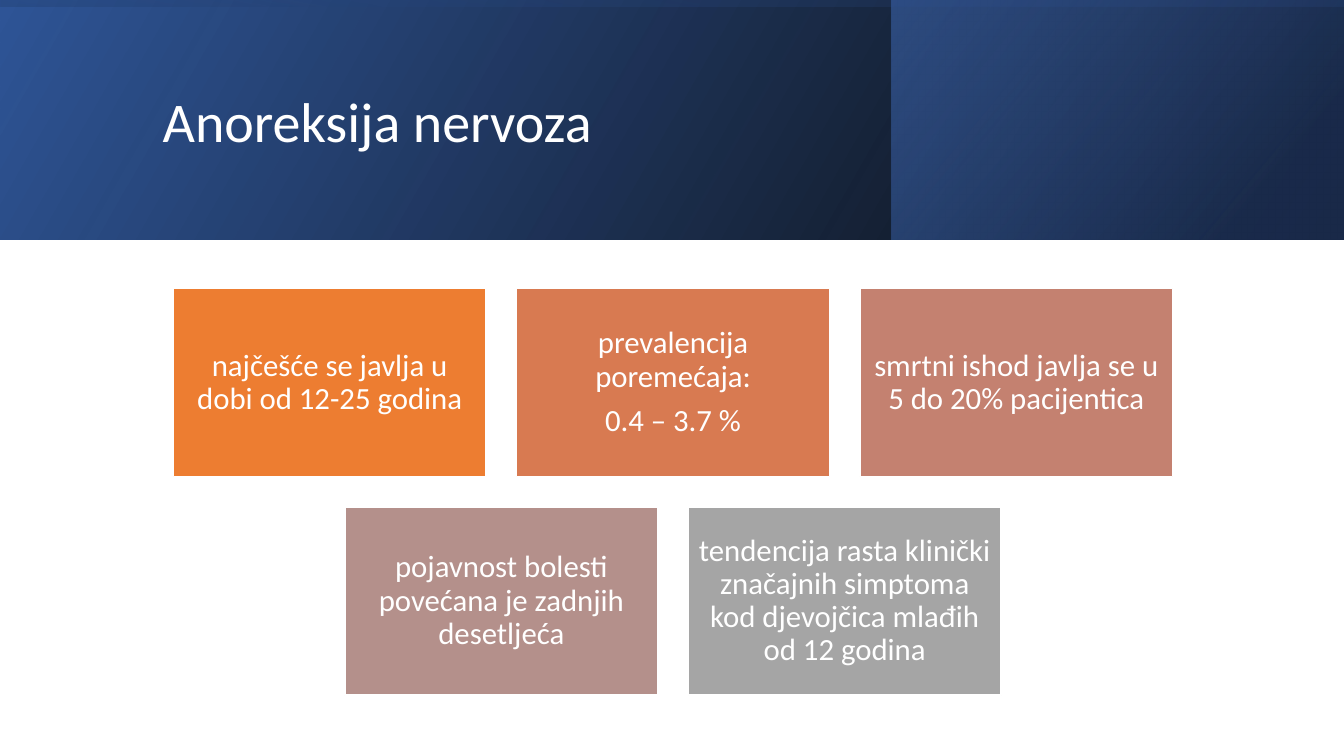
from lxml import etree
from pptx import Presentation
from pptx import util as u
from pptx.dml.color import RGBColor
from pptx.enum import shapes, text
from pptx.oxml import ns

PX = 9525
FONT = "Calibri"
WHITE = "FFFFFF"
CARDS = [
    [("ED7D31", ["najčešće se javlja u dobi od 12-25 godina"]),
     ("D87A51", ["prevalencija poremećaja:", "0.4 – 3.7 %"]),
     ("C48170", ["smrtni ishod javlja se u 5 do 20% pacijentica"])],
    [("B4908B", ["pojavnost bolesti povećana je zadnjih desetljeća"]),
     ("A5A5A5", ["tendencija rasta klinički značajnih simptoma "
                 "kod djevojčica mlađih od 12 godina"])],
]


def px(length):
    """Turn pixels into EMU."""
    return u.Emu(round(length * PX))


def color(value):
    """Turn a hex string into a colour."""
    return RGBColor.from_string(value)


def add_box(slide, box):
    """Add a rectangle without shadow or outline."""
    shape = slide.shapes.add_shape(shapes.MSO_SHAPE.RECTANGLE, *map(px, box))
    shape.shadow.inherit = False
    shape.line.fill.background()
    return shape


def write(frame, lines, size, align, margin, space_after=0):
    """Fill a text frame with white, vertically centred paragraphs."""
    frame.word_wrap = True
    frame.vertical_anchor = text.MSO_ANCHOR.MIDDLE
    frame.margin_left = frame.margin_right = px(margin)
    frame.margin_top = frame.margin_bottom = px(margin)
    for index, line in enumerate(lines):
        paragraph = frame.add_paragraph() if index else frame.paragraphs[0]
        paragraph.alignment = align
        paragraph.line_spacing = 0.9
        paragraph.space_after = u.Pt(space_after)
        run = paragraph.add_run()
        run.text = line
        run.font.name = FONT
        run.font.size = u.Pt(size)
        run.font.color.rgb = color(WHITE)


def add_gradient(slide, box, angle, stops, rotation=0):
    """Add a mirrored rectangle with a translucent linear gradient."""
    shape = add_box(slide, box)
    shape.rotation = rotation
    properties = shape._element.spPr
    properties.find(ns.qn("a:xfrm")).set("flipH", "1")
    gradient = etree.Element(ns.qn("a:gradFill"), rotWithShape="1")
    stop_list = etree.SubElement(gradient, ns.qn("a:gsLst"))
    for position, value, alpha in stops:
        stop = etree.SubElement(stop_list, ns.qn("a:gs"), pos=str(position * 1000))
        tone = etree.SubElement(stop, ns.qn("a:srgbClr"), val=value)
        etree.SubElement(tone, ns.qn("a:alpha"), val=str(alpha * 1000))
    etree.SubElement(gradient, ns.qn("a:lin"), ang=str(angle * 60000), scaled="0")
    properties.find(ns.qn("a:prstGeom")).addnext(gradient)


def add_banner(slide, left, top, width, height):
    """Draw the layered gradient banner and its title."""
    panel = 431
    add_gradient(slide, (left, top, width, height), 330,
                 [(0, "000000", 96), (100, "2F5597", 100)])
    add_gradient(slide, (left + width - panel, top, panel, height), 320,
                 [(19, "203864", 68), (100, "4472C4", 48)])
    offset = (width - height) / 2
    add_gradient(slide, (left + offset, top - offset, height, width), 350,
                 [(23, "2F5597", 16), (99, "000000", 45)], rotation=270)
    title = slide.shapes.add_textbox(px(left + 145), px(top + 36), px(1020), px(165))
    write(title.text_frame, ["Anoreksija nervoza"], 40, text.PP_ALIGN.LEFT, 10)


def add_cards(slide, left, top, width, height):
    """Draw the cards in rows, each row centred in the box."""
    gap = 29
    card_width = (width - 2 * gap) / 3
    card_height = (height - gap) / 2
    for row, cards in enumerate(CARDS):
        row_width = len(cards) * (card_width + gap) - gap
        start = left + (width - row_width) / 2
        for column, (fill, lines) in enumerate(cards):
            card = add_box(slide, (start + column * (card_width + gap),
                                   top + row * (card_height + gap),
                                   card_width, card_height))
            card.fill.solid()
            card.fill.fore_color.rgb = color(fill)
            card.line.color.rgb = color(WHITE)
            card.line.width = u.Pt(1)
            write(card.text_frame, lines, 22, text.PP_ALIGN.CENTER, 9, 7.7)


def main():
    """Build and save the slide."""
    presentation = Presentation()
    presentation.slide_width = px(1280)
    presentation.slide_height = px(720)
    slide = presentation.slides.add_slide(presentation.slide_layouts[6])
    add_banner(slide, 0, 0, 1280, 228)
    add_cards(slide, 165, 275, 952, 387)
    presentation.save("out.pptx")


if __name__ == "__main__":
    main()
